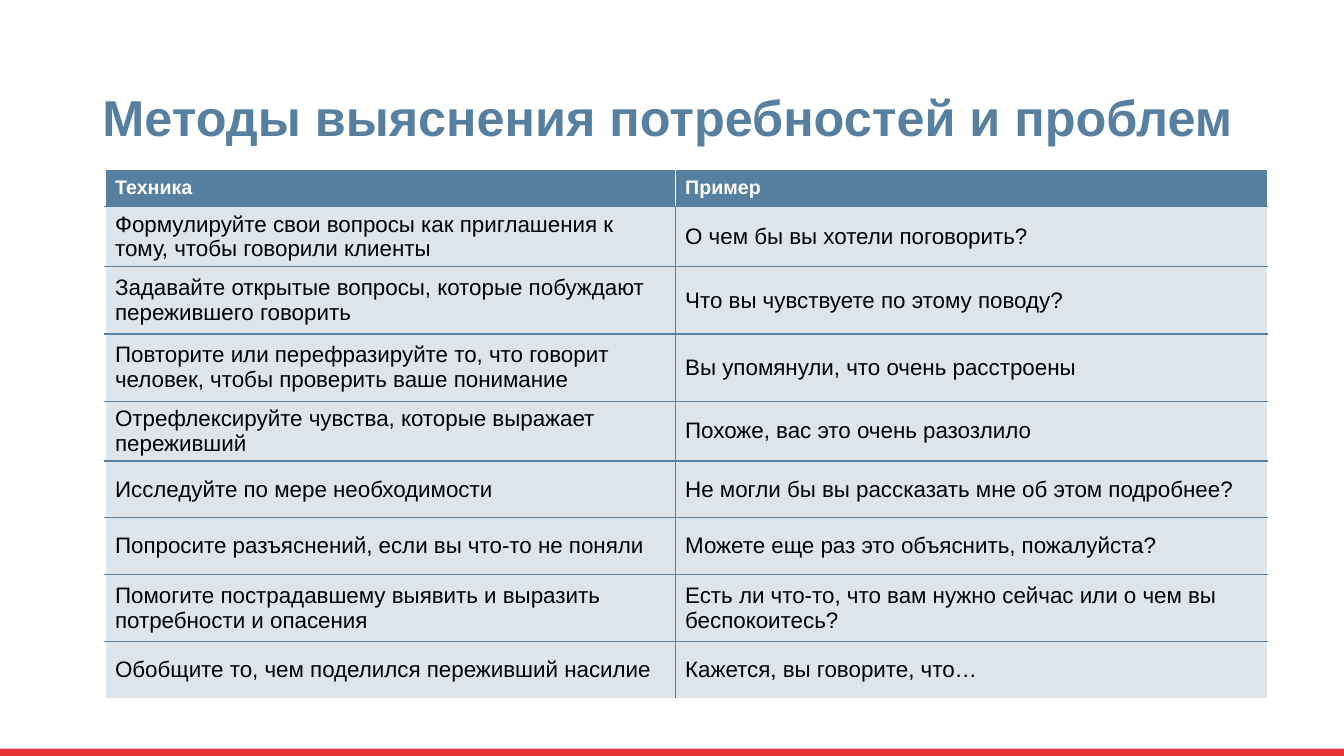
from lxml import etree
from pptx import Presentation
from pptx import util as u
from pptx.dml.color import RGBColor
from pptx.enum import shapes, text
from pptx.oxml import ns

PX = 9525
SLIDE_WIDTH, SLIDE_HEIGHT = 1280, 720
FONT = "Arial"
COLORS = {"blue": "577F9F", "red": "E73439", "white": "FFFFFF", "black": "000000"}
TINT_PERCENT = 20

TITLE = "Методы выяснения потребностей и проблем"
COLUMN_WIDTHS = [543, 564]
# Row height, technique, example
ROWS = [
    (36, "Техника", "Пример"),
    (54, "Формулируйте свои вопросы как приглашения к тому, чтобы говорили клиенты",
     "О чем бы вы хотели поговорить?"),
    (64, "Задавайте открытые вопросы, которые побуждают пережившего говорить",
     "Что вы чувствуете по этому поводу?"),
    (64, "Повторите или перефразируйте то, что говорит человек, чтобы проверить ваше понимание",
     "Вы упомянули, что очень расстроены"),
    (54, "Отрефлексируйте чувства, которые выражает переживший",
     "Похоже, вас это очень разозлило"),
    (54, "Исследуйте по мере необходимости",
     "Не могли бы вы рассказать мне об этом подробнее?"),
    (54, "Попросите разъяснений, если вы что-то не поняли",
     "Можете еще раз это объяснить, пожалуйста?"),
    (64, "Помогите пострадавшему выявить и выразить потребности и опасения",
     "Есть ли что-то, что вам нужно сейчас или о чем вы беспокоитесь?"),
    (54, "Обобщите то, чем поделился переживший насилие",
     "Кажется, вы говорите, что…"),
]


def emu(*lengths):
    return [length * PX for length in lengths]


def color(name):
    return RGBColor.from_string(COLORS[name])


def set_font(paragraph, size, name, bold):
    paragraph.font.name = FONT
    paragraph.font.size = u.Pt(size)
    paragraph.font.bold = bold
    paragraph.font.color.rgb = color(name)


def add_child(parent, tag, **attributes):
    return etree.SubElement(parent, ns.qn(tag), attributes)


def set_borders(cell, left, right, top, bottom):
    """Draw one-point borders; call before filling, as the schema puts lines first."""
    properties = cell._tc.get_or_add_tcPr()
    for side, name in zip("LRTB", (left, right, top, bottom)):
        line = add_child(properties, f"a:ln{side}", w=str(u.Pt(1)))
        add_child(add_child(line, "a:solidFill"), "a:srgbClr", val=COLORS[name])


def fill_cell(cell, opacity):
    cell.fill.solid()
    cell.fill.fore_color.rgb = color("blue")
    if opacity < 100:
        rgb = cell._tc.tcPr.find(f"{ns.qn('a:solidFill')}/{ns.qn('a:srgbClr')}")
        add_child(rgb, "a:alpha", val=str(opacity * 1000))


def add_footer_bar(slide, left, top, width, height):
    bar = slide.shapes.add_shape(
        shapes.MSO_SHAPE.RECTANGLE, *emu(left, top, width, height))
    bar.shadow.inherit = False
    bar.fill.solid()
    bar.fill.fore_color.rgb = color("red")
    bar.line.fill.background()


def format_title(slide, left, top, width, height):
    title = slide.shapes.title
    title.left, title.top, title.width, title.height = emu(left, top, width, height)
    frame = title.text_frame
    frame.text = TITLE
    frame.auto_size = text.MSO_AUTO_SIZE.NONE
    frame.vertical_anchor = text.MSO_ANCHOR.BOTTOM
    paragraph = frame.paragraphs[0]
    paragraph.alignment = text.PP_ALIGN.LEFT
    paragraph.line_spacing = 0.9
    set_font(paragraph, 36, "blue", True)


def add_methods_table(slide, left, top):
    width, height = sum(COLUMN_WIDTHS), sum(row[0] for row in ROWS)
    table = slide.shapes.add_table(
        len(ROWS), len(COLUMN_WIDTHS), *emu(left, top, width, height)).table
    for column, column_width in zip(table.columns, COLUMN_WIDTHS):
        column.width = column_width * PX
    last_row = len(ROWS) - 1
    for row_index, (row_height, *entries) in enumerate(ROWS):
        table.rows[row_index].height = row_height * PX
        is_header = row_index == 0
        divider = "white" if is_header else "blue"
        for column_index, entry in enumerate(entries):
            cell = table.cell(row_index, column_index)
            cell.text = entry
            cell.vertical_anchor = text.MSO_ANCHOR.MIDDLE
            set_font(cell.text_frame.paragraphs[0], 14 if is_header else 16,
                     "white" if is_header else "black", is_header)
            set_borders(cell,
                        left="white" if column_index == 0 else divider,
                        right="white" if column_index == 1 else divider,
                        top=divider,
                        bottom="white" if row_index == last_row else "blue")
            fill_cell(cell, 100 if is_header else TINT_PERCENT)


def main():
    presentation = Presentation()
    presentation.slide_width, presentation.slide_height = emu(SLIDE_WIDTH, SLIDE_HEIGHT)
    slide = presentation.slides.add_slide(presentation.slide_layouts[5])
    add_footer_bar(slide, 0, 713, SLIDE_WIDTH, 7)
    format_title(slide, 88, 61, 1108, 84)
    add_methods_table(slide, 100, 161)
    presentation.save("out.pptx")


if __name__ == "__main__":
    main()
